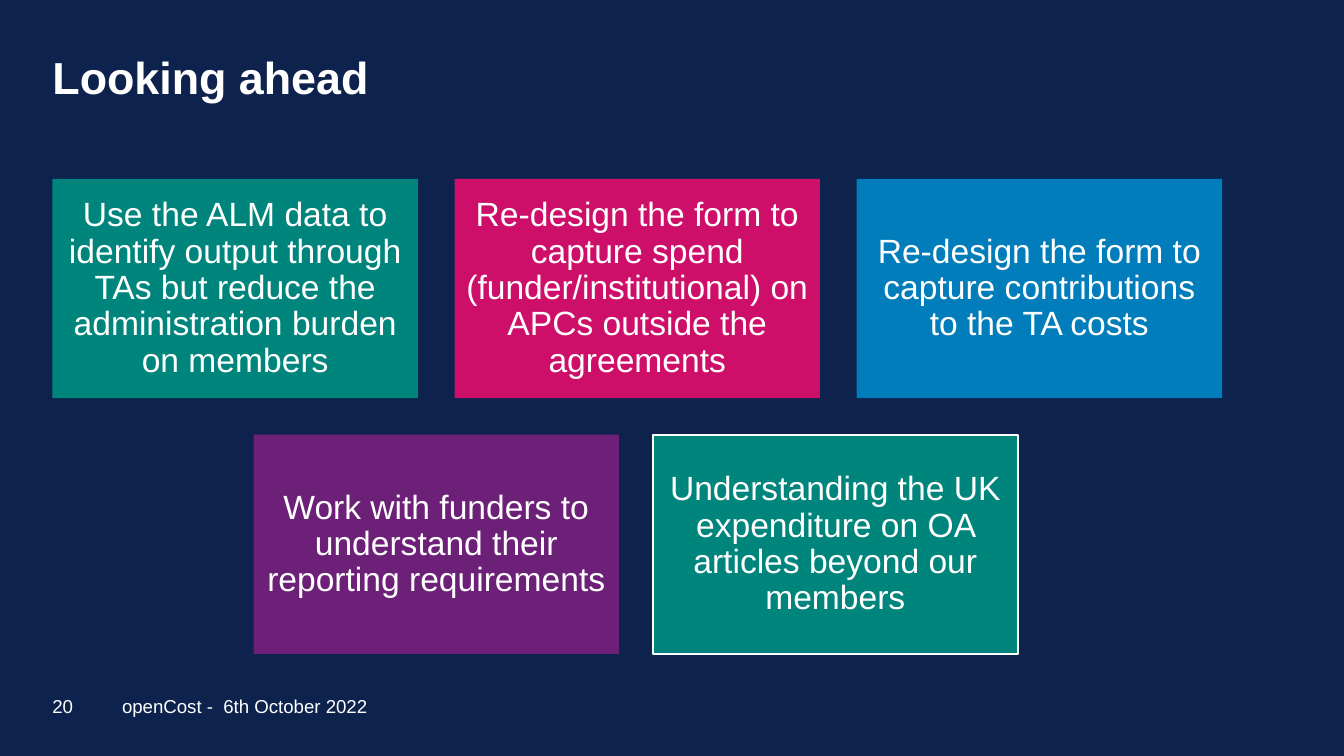
from pptx import Presentation
from pptx import util as u
from pptx.dml import color
from pptx.enum import shapes, text

THEME = {
    "font": "Arial",
    "background": "0D224C", "text": "FFFFFF",
    "teal": "00857D", "pink": "CE0F69", "blue": "007DBA", "purple": "6D2077",
    "title_size": 24, "card_size": 18, "footer_size": 10,
}

TITLE = "Looking ahead"
ROWS = [
    {"left": 28.1, "gap": 19.6, "cards": [
        ("Use the ALM data to identify output through TAs but reduce the administration burden on members", "teal", False),
        ("Re-design the form to capture spend (funder/institutional) on APCs outside the agreements", "pink", False),
        ("Re-design the form to capture contributions to the TA costs", "blue", False),
    ]},
    {"left": 135.8, "gap": 18, "cards": [
        ("Work with funders to understand their reporting requirements", "purple", False),
        ("Understanding the UK expenditure on OA articles beyond our members", "teal", True),
    ]},
]
FOOTERS = [("20", 28.1, 16), ("openCost -  6th October 2022", 65.4, 275)]

CARD_WIDTH, CARD_HEIGHT = 195.8, 117.5
CARDS_TOP, ROW_GAP = 95.8, 19.6
FOOTER_TOP, FOOTER_HEIGHT = 364.5, 28


def rgb(name):
    return color.RGBColor.from_string(THEME[name])


def write(shape, content, size, align, anchor, inset=0, bold=False, spacing=1.0):
    frame = shape.text_frame
    frame.text = content
    frame.word_wrap = True
    frame.auto_size = text.MSO_AUTO_SIZE.NONE
    frame.vertical_anchor = anchor
    frame.margin_left = frame.margin_right = u.Pt(inset)
    frame.margin_top = frame.margin_bottom = u.Pt(inset)
    paragraph = frame.paragraphs[0]
    paragraph.alignment = align
    paragraph.line_spacing = spacing
    paragraph.space_before = u.Pt(0)
    font = paragraph.runs[0].font
    font.name, font.size, font.bold = THEME["font"], u.Pt(THEME[size]), bold
    font.color.rgb = rgb("text")


def add_card(slide, content, fill, outlined, left, top):
    card = slide.shapes.add_shape(
        shapes.MSO_SHAPE.RECTANGLE,
        u.Pt(left), u.Pt(top), u.Pt(CARD_WIDTH), u.Pt(CARD_HEIGHT))
    card.shadow.inherit = False
    card.fill.solid()
    card.fill.fore_color.rgb = rgb(fill)
    if outlined:
        card.line.color.rgb = rgb("text")
        card.line.width = u.Pt(1)
    else:
        card.line.fill.background()
    write(card, content, "card_size", text.PP_ALIGN.CENTER,
          text.MSO_ANCHOR.MIDDLE, inset=5, spacing=0.9)


def main():
    presentation = Presentation()
    presentation.slide_width, presentation.slide_height = u.Pt(720), u.Pt(405)
    slide = presentation.slides.add_slide(presentation.slide_layouts.get_by_name("Title Only"))
    slide.background.fill.solid()
    slide.background.fill.fore_color.rgb = rgb("background")

    title = slide.shapes.title
    title.left, title.top = u.Pt(28.1), u.Pt(26.6)
    title.width, title.height = u.Pt(513.4), u.Pt(26.6)
    write(title, TITLE, "title_size", text.PP_ALIGN.LEFT, text.MSO_ANCHOR.TOP, bold=True)

    for row_index, row in enumerate(ROWS):
        top = CARDS_TOP + row_index * (CARD_HEIGHT + ROW_GAP)
        for column, (content, fill, outlined) in enumerate(row["cards"]):
            left = row["left"] + column * (CARD_WIDTH + row["gap"])
            add_card(slide, content, fill, outlined, left, top)

    for content, left, width in FOOTERS:
        footer = slide.shapes.add_textbox(
            u.Pt(left), u.Pt(FOOTER_TOP), u.Pt(width), u.Pt(FOOTER_HEIGHT))
        write(footer, content, "footer_size", text.PP_ALIGN.LEFT, text.MSO_ANCHOR.MIDDLE)

    presentation.save("out.pptx")


if __name__ == "__main__":
    main()
